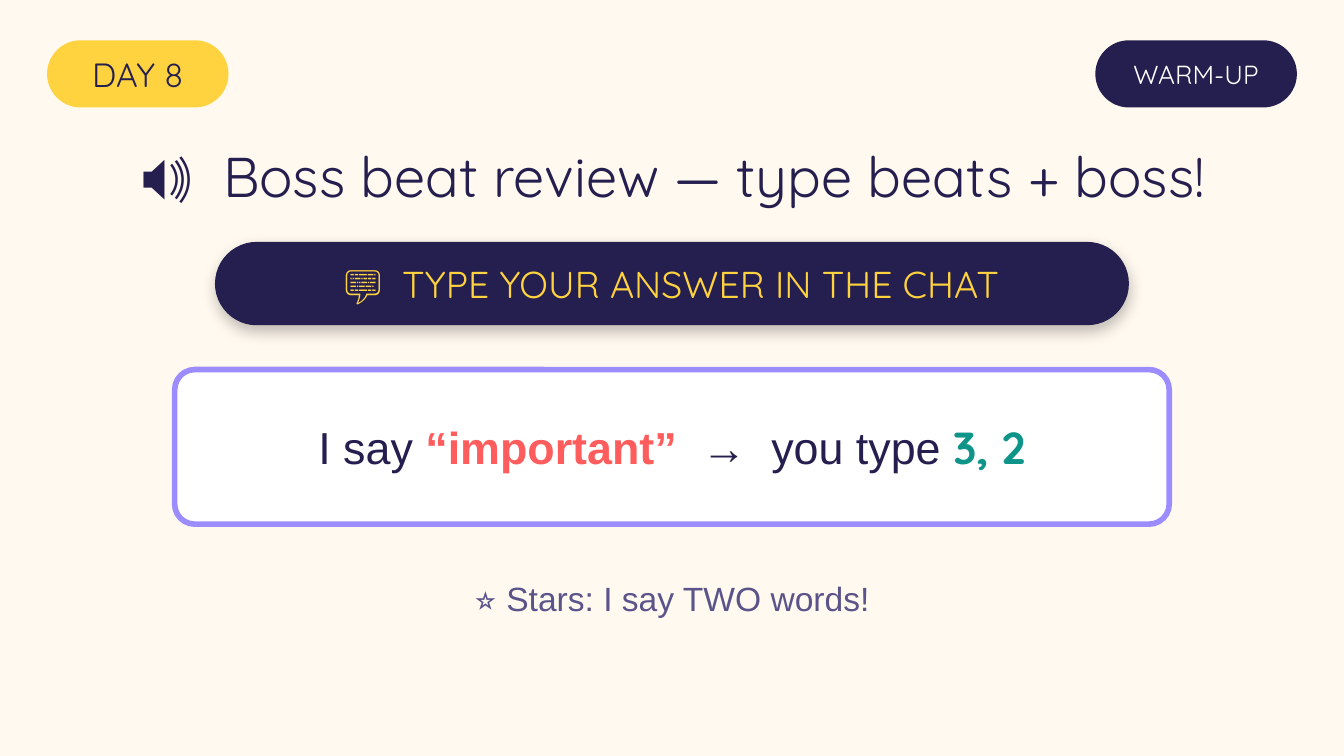
"""Build the Day 8 warm-up slide about typing beats in the chat."""
from lxml import etree
from pptx import Presentation
from pptx import util as u
from pptx.dml.color import RGBColor
from pptx.enum import shapes, text
from pptx.oxml import ns

CREAM = RGBColor(0xFF, 0xF9, 0xEF)
YELLOW = RGBColor(0xFF, 0xD2, 0x3F)
NAVY = RGBColor(0x24, 0x1F, 0x4E)
WHITE = RGBColor(0xFF, 0xFF, 0xFF)
LILAC = RGBColor(0x9B, 0x8C, 0xFF)
CORAL = RGBColor(0xFF, 0x5D, 0x5D)
TEAL = RGBColor(0x0E, 0x94, 0x88)
VIOLET = RGBColor(0x5A, 0x54, 0x8A)

presentation = Presentation()
presentation.slide_width = u.Inches(10)
presentation.slide_height = presentation.slide_width * 9 // 16
COLUMNS = 200
CELL = presentation.slide_width // COLUMNS

slide = presentation.slides.add_slide(presentation.slide_layouts[6])
slide.background.fill.solid()
slide.background.fill.fore_color.rgb = CREAM


def add_panel(left, top, width, height, fill, roundness=0.5):
    """Add a rounded rectangle measured in grid cells."""
    box = [round(cells * CELL) for cells in (left, top, width, height)]
    shape = slide.shapes.add_shape(shapes.MSO_SHAPE.ROUNDED_RECTANGLE, *box)
    shape.adjustments[0] = roundness
    shape.shadow.inherit = False
    shape.fill.solid()
    shape.fill.fore_color.rgb = fill
    shape.line.fill.background()
    return shape


def write(shape, words, size, color, font="Quicksand"):
    """Centre one line of text in a shape and return its paragraph."""
    frame = shape.text_frame
    frame.word_wrap = True
    frame.vertical_anchor = text.MSO_ANCHOR.MIDDLE
    frame.margin_left = frame.margin_right = 0
    frame.margin_top = frame.margin_bottom = 0
    paragraph = frame.paragraphs[0]
    paragraph.alignment = text.PP_ALIGN.CENTER
    paragraph.font.size = u.Pt(size)
    paragraph.font.name = font
    paragraph.font.color.rgb = color
    if words:
        paragraph.add_run().text = words
    return paragraph


write(add_panel(7, 6, 27, 10, YELLOW), "DAY 8", 18, NAVY)
write(add_panel(COLUMNS - 37, 6, 30, 10, NAVY), "WARM-UP", 14, WHITE)

full_width_lines = [
    (19, 14, "🔊  Boss beat review — type beats + boss!", 30, NAVY, "Quicksand"),
    (84, 10, "⭐ Stars: I say TWO words!", 18, VIOLET, "Arial"),
]
for top, height, words, size, color, font in full_width_lines:
    textbox = slide.shapes.add_textbox(0, top * CELL, COLUMNS * CELL, height * CELL)
    write(textbox, words, size, color, font)

chat_banner = add_panel(32, 36, COLUMNS - 64, 12.4, NAVY)
write(chat_banner, "💬  TYPE YOUR ANSWER IN THE CHAT", 20, YELLOW)
effects = chat_banner._element.spPr.find(ns.qn("a:effectLst"))
shadow = etree.SubElement(
    effects, ns.qn("a:outerShdw"), blurRad=str(u.Pt(8)), dist=str(u.Pt(3)),
    dir="5400000", algn="t", rotWithShape="0")
shadow_color = etree.SubElement(shadow, ns.qn("a:srgbClr"), val="000000")
etree.SubElement(shadow_color, ns.qn("a:alpha"), val="25000")

example_card = add_panel(26, 55, COLUMNS - 52, 23, WHITE, 0.13)
example_card.line.color.rgb = LILAC
example_card.line.width = u.Pt(3)
example = write(example_card, "", 24, NAVY, "Arial")
example_runs = [
    ("I say ", "Arial", NAVY, False),
    ("“important”", "Arial", CORAL, True),
    ("  →  you type ", "Arial", NAVY, False),
    ("3, 2", "Quicksand", TEAL, True),
]
for words, font, color, bold in example_runs:
    run = example.add_run()
    run.text = words
    run.font.name = font
    run.font.color.rgb = color
    run.font.bold = bold

presentation.save("out.pptx")
